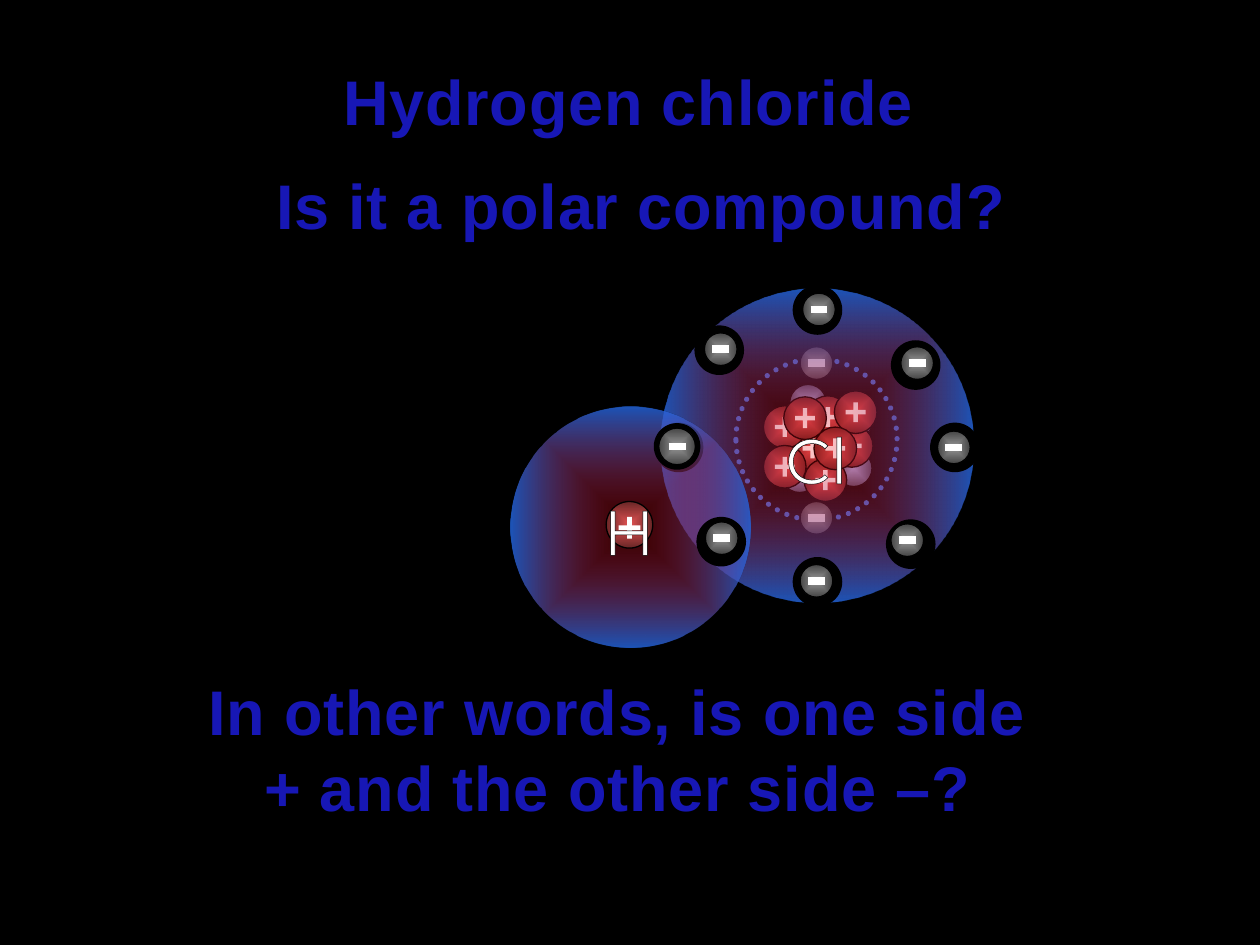
from lxml import etree
from pptx import Presentation
from pptx import util as u
from pptx.dml.color import RGBColor
from pptx.enum import dml, shapes, text
from pptx.oxml import ns, parse_xml

COLORS = {
    "black": "000000", "white": "FFFFFF", "orbit": "3574E5",
    "electron": "969696", "electron_edge": "454545",
    "neutron": "A1AEE7", "neutron_edge": "4B516B",
    "proton": "E35353", "proton_edge": "692626",
    "cloud": "FF0000", "cloud_edge": "2368E3",
    "title": "1717B5", "title_end": "0D0D84",
}
RADIAL = ('<a:path path="shape"><a:fillToRect l="50000" t="50000" '
          'r="50000" b="50000"/></a:path>')
LINEAR = '<a:lin ang="5400000" scaled="1"/>'
NEUTRONS = [(16.12, 9.56), (17.23, 8.47), (17.21, 9.44), (16.29, 8.12)]
PROTONS = [(16.38, 9.04), (17.17, 8.99), (16.64, 9.68), (15.82, 8.61), (16.69, 8.41),
           (15.82, 9.41), (17.25, 8.31), (16.23, 8.43), (16.84, 9.04)]
INNER_ELECTRONS = [(16.46, 7.32), (16.46, 10.44)]
OUTER_ELECTRONS = [
    ((16.48, 11.73), (16.46, 11.71)), ((16.48, 6.25), (16.51, 6.24)),
    ((18.36, 10.97), (18.29, 10.89)), ((14.5, 7.06), (14.53, 7.04)),
    ((18.46, 7.36), (18.49, 7.32)), ((19.25, 9.02), (19.23, 9.02)),
]
TITLES = [
    ("Hydrogen chloride", (6.6, 1.14, 12.14, 1.8), False),
    ("Is it a polar compound?", (5.23, 3.23, 15.39, 1.8), False),
    ("In other words, is one side + and the other side –?", (3.58, 13.44, 17.75, 3.33), True),
]


def rgb(name):
    """Return the named colour."""
    return RGBColor.from_string(COLORS[name])


def gradient(start, end, direction=RADIAL, alphas=(100, 100), first=0):
    """Return a two-stop gradient fill element."""
    stops = "".join(
        f'<a:gs pos="{position * 1000}"><a:srgbClr val="{COLORS[name]}">'
        f'<a:alpha val="{alpha * 1000}"/></a:srgbClr></a:gs>'
        for position, name, alpha in zip((first, 100), (start, end), alphas))
    return parse_xml(f'<a:gradFill {ns.nsdecls("a")} rotWithShape="1">'
                     f'<a:gsLst>{stops}</a:gsLst>{direction}</a:gradFill>')


def add_centred(container, kind, centre, size, color=None):
    """Add a preset shape around a centre, without a line."""
    x, y = centre
    shape = container.shapes.add_shape(
        kind, u.Cm(x - size / 2), u.Cm(y - size / 2), u.Cm(size), u.Cm(size))
    shape.shadow.inherit = False
    shape.line.fill.background()
    if color:
        shape.fill.solid()
        shape.fill.fore_color.rgb = rgb(color)
    return shape


def add_disc(container, centre, size, color=None):
    """Add a plain or unfilled disc."""
    return add_centred(container, shapes.MSO_SHAPE.OVAL, centre, size, color)


def add_ball(container, centre, size, name):
    """Add an outlined particle with a radial gradient."""
    ball = add_disc(container, centre, size)
    ball._element.spPr.insert(2, gradient(name, f"{name}_edge"))
    ball.line.color.rgb = rgb("black")
    ball.line.width = u.Pt(0.75)


def add_cloud(slide, centre, size):
    """Add a translucent electron cloud."""
    cloud = add_disc(slide, centre, size)
    cloud._element.spPr.insert(2, gradient("cloud", "cloud_edge", alphas=(20, 81)))


def add_orbit(slide, centre, size):
    """Add the ring of round dots for the inner shell."""
    orbit = add_disc(slide, centre, size)
    orbit.fill.background()
    orbit.line.color.rgb = rgb("orbit")
    orbit.line.width = u.Pt(3)
    orbit.line.dash_style = dml.MSO_LINE.ROUND_DOT
    orbit._element.spPr.find(ns.qn("a:ln")).set("cap", "rnd")


def add_electron(slide, centre, size=0.66):
    """Add an electron with its minus sign as a group."""
    group = slide.shapes.add_group_shape()
    add_ball(group, centre, size, "electron")
    x, y = centre
    minus = group.shapes.add_connector(
        shapes.MSO_CONNECTOR.STRAIGHT, u.Cm(x - 0.17), u.Cm(y), u.Cm(x + 0.17), u.Cm(y))
    minus.line.color.rgb = rgb("white")
    minus.line.width = u.Pt(4.5)
    etree.SubElement(minus._element.spPr, ns.qn("a:effectLst"))


def add_proton(slide, centre, size=0.86, sign=0.4, drop=0):
    """Add a proton with its plus sign as a group."""
    group = slide.shapes.add_group_shape()
    add_ball(group, centre, size, "proton")
    x, y = centre
    plus = add_centred(group, shapes.MSO_SHAPE.CROSS, (x, y + drop), sign, "white")
    plus.adjustments[0] = 0.39


def add_text(slide, content, box, font="Arial", bold=False, wrap=False, outlined=False):
    """Add centred 36 pt text, as a gradient title or an outlined symbol."""
    frame = slide.shapes.add_textbox(*map(u.Cm, box)).text_frame
    frame.word_wrap = wrap
    paragraph = frame.paragraphs[0]
    paragraph.alignment = text.PP_ALIGN.CENTER
    run = paragraph.add_run()
    run.text = content
    run.font.name, run.font.size, run.font.bold = font, u.Pt(36), bold
    properties = run._r.get_or_add_rPr()
    if outlined:
        frame.margin_left = frame.margin_right = 0
        run.font.fill.solid()
        run.font.fill.fore_color.rgb = rgb("white")
        properties.insert(0, parse_xml(
            f'<a:ln {ns.nsdecls("a")} w="9525"><a:solidFill>'
            f'<a:srgbClr val="{COLORS["black"]}"/></a:solidFill></a:ln>'))
    else:
        frame.auto_size = text.MSO_AUTO_SIZE.SHAPE_TO_FIT_TEXT
        properties.set("spc", "50")
        properties.insert(0, gradient("title", "title_end", LINEAR, first=25))


def add_chlorine(slide):
    """Draw the chlorine atom."""
    add_orbit(slide, (16.46, 8.86), 3.25)
    for centre in INNER_ELECTRONS:
        add_electron(slide, centre)
    for centre in NEUTRONS:
        add_ball(slide, centre, 0.74, "neutron")
    for centre in PROTONS:
        add_proton(slide, centre)
    add_cloud(slide, (16.47, 8.98), 6.32)
    add_disc(slide, (13.68, 9.02), 1, "black")
    for gap, centre in OUTER_ELECTRONS:
        add_disc(slide, gap, 1, "black")
        add_electron(slide, centre)
    add_text(slide, "Cl", (15.7, 8.36, 1.52, 1.3), font="Montserrat", outlined=True)


def add_hydrogen(slide):
    """Draw the hydrogen atom and the bonding electrons."""
    add_cloud(slide, (12.71, 10.63), 4.85)
    add_proton(slide, (12.69, 10.58), size=0.94, sign=0.44, drop=0.06)
    add_disc(slide, (13.65, 9), 0.94, "black")
    add_electron(slide, (13.65, 9), size=0.74)
    add_disc(slide, (14.54, 10.92), 1, "black")
    add_electron(slide, (14.55, 10.85))
    add_text(slide, "H", (12.07, 9.8, 1.22, 1.42), font="Montserrat", outlined=True)


def main():
    """Build the slide and save it."""
    presentation = Presentation()
    presentation.slide_width, presentation.slide_height = u.Cm(25.4), u.Cm(19.05)
    slide = presentation.slides.add_slide(presentation.slide_layouts[6])
    slide.background.fill.solid()
    slide.background.fill.fore_color.rgb = rgb("black")
    add_chlorine(slide)
    add_hydrogen(slide)
    for content, box, wrap in TITLES:
        add_text(slide, content, box, bold=True, wrap=wrap)
    presentation.save("out.pptx")


if __name__ == "__main__":
    main()
